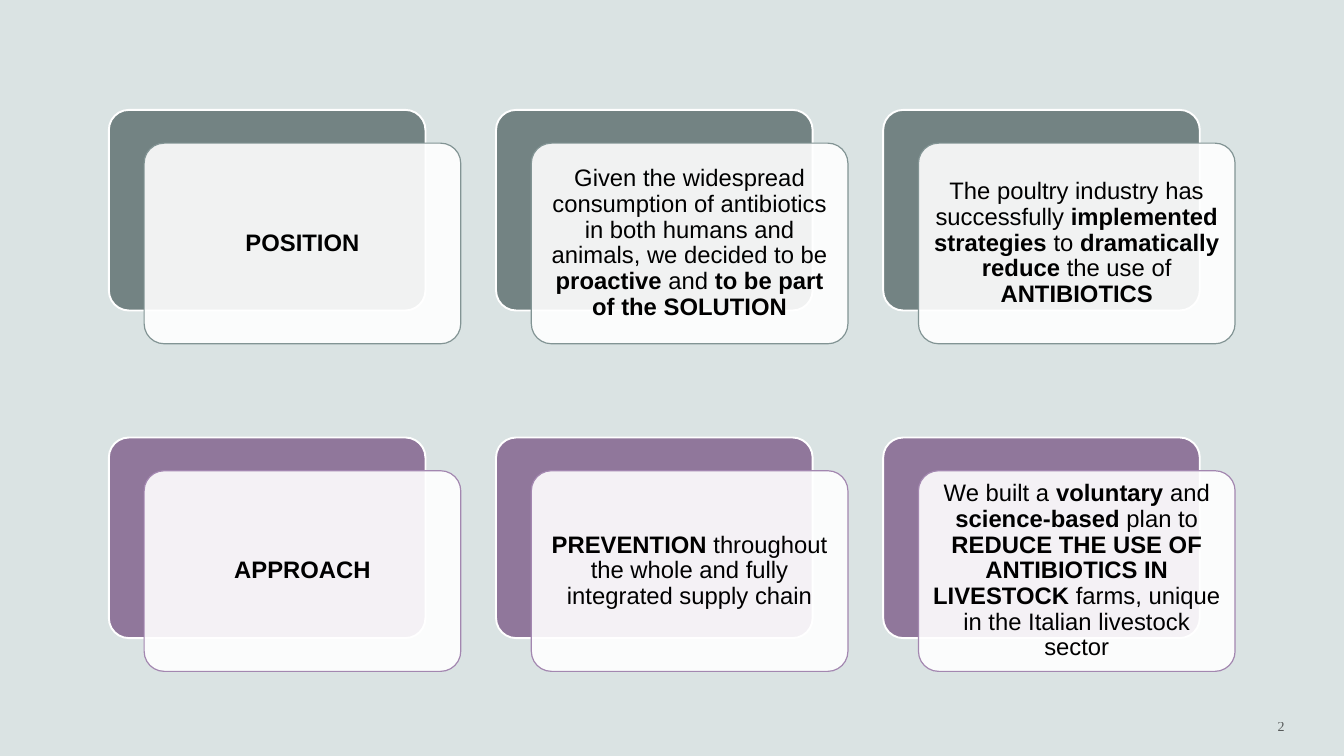
from lxml import etree
from pptx import Presentation
from pptx.dml.color import RGBColor
from pptx.enum.shapes import MSO_SHAPE
from pptx.enum.text import MSO_ANCHOR, PP_ALIGN
from pptx.oxml.ns import qn
from pptx.util import Inches, Pt

BACKGROUND = RGBColor(0xDA, 0xE3, 0xE3)
WHITE = RGBColor(0xFF, 0xFF, 0xFF)
BLACK = RGBColor(0x00, 0x00, 0x00)
TEAL = RGBColor(0x73, 0x83, 0x83)
TEAL_EDGE = RGBColor(0x82, 0x94, 0x94)
PURPLE = RGBColor(0x90, 0x77, 0x9B)
PURPLE_EDGE = RGBColor(0xA3, 0x87, 0xB0)

CARD_WIDTH, CARD_HEIGHT = 3.14, 1.99
FRONT_DX, FRONT_DY = 0.35, 0.33
COLUMN_STEP = 3.84
ROWS_LEFT = 1.08

# Bold passages stand between double asterisks.
POSITION_CARDS = [
    "**POSITION**",
    "Given the widespread consumption of antibiotics in both humans and "
    "animals, we decided to be **proactive **and **to be part of the SOLUTION**",
    "The poultry industry has successfully **implemented strategies **to "
    "**dramatically reduce **the use of **ANTIBIOTICS**",
]
APPROACH_CARDS = [
    "**APPROACH**",
    "**PREVENTION** throughout the whole and fully integrated supply chain",
    "We built a **voluntary** and **science-based** plan to **REDUCE THE USE OF "
    "ANTIBIOTICS IN LIVESTOCK **farms, unique in the Italian livestock sector",
]


def set_opacity(fill, percent):
    color = fill._xPr.find(qn("a:solidFill"))[0]
    etree.SubElement(color, qn("a:alpha")).set("val", str(percent * 1000))


def add_panel(group, left, top, fill_color, edge_color, edge_width):
    panel = group.shapes.add_shape(
        MSO_SHAPE.ROUNDED_RECTANGLE, Inches(left), Inches(top),
        Inches(CARD_WIDTH), Inches(CARD_HEIGHT))
    panel.adjustments[0] = 0.1
    panel.shadow.inherit = False
    panel.fill.solid()
    panel.fill.fore_color.rgb = fill_color
    panel.line.color.rgb = edge_color
    panel.line.width = Pt(edge_width)
    return panel


def write_message(frame, message):
    frame.word_wrap = True
    frame.vertical_anchor = MSO_ANCHOR.MIDDLE
    frame.margin_left = frame.margin_right = Inches(0.07)
    frame.margin_top = frame.margin_bottom = Inches(0.07)
    paragraph = frame.paragraphs[0]
    paragraph.alignment = PP_ALIGN.CENTER
    paragraph.line_spacing = 0.9
    for index, passage in enumerate(message.split("**")):
        if passage:
            run = paragraph.add_run()
            run.text = passage
            run.font.name = "Arial"
            run.font.size = Pt(17)
            run.font.bold = index % 2 == 1
            run.font.color.rgb = BLACK


def add_card_row(slide, left, top, messages, back_color, edge_color):
    """Place each message on a translucent card in front of a coloured one."""
    group = slide.shapes.add_group_shape()
    for column, message in enumerate(messages):
        card_left = left + column * COLUMN_STEP
        add_panel(group, card_left, top, back_color, WHITE, 1.35)
        front = add_panel(group, card_left + FRONT_DX, top + FRONT_DY,
                          WHITE, edge_color, 0.85)
        set_opacity(front.fill, 90)
        write_message(front.text_frame, message)


def add_page_number(slide, left, top, width, height):
    box = slide.shapes.add_textbox(
        Inches(left), Inches(top), Inches(width), Inches(height))
    frame = box.text_frame
    frame.word_wrap = True
    frame.vertical_anchor = MSO_ANCHOR.MIDDLE
    paragraph = frame.paragraphs[0]
    paragraph.alignment = PP_ALIGN.RIGHT
    paragraph.space_after = Pt(6)
    run = paragraph.add_run()
    run.text = "2"
    run.font.name = "Times New Roman"
    run.font.size = Pt(10)
    run.font.color.rgb = BLACK
    set_opacity(run.font.fill, 60)
    run.font._element.set("spc", "200")


def main():
    deck = Presentation()
    deck.slide_width, deck.slide_height = Inches(13.33), Inches(7.5)
    slide = deck.slides.add_slide(deck.slide_layouts[6])
    slide.background.fill.solid()
    slide.background.fill.fore_color.rgb = BACKGROUND
    add_page_number(slide, 10.92, 6.95, 1.92, 0.5)
    add_card_row(slide, ROWS_LEFT, 1.09, POSITION_CARDS, TEAL, TEAL_EDGE)
    add_card_row(slide, ROWS_LEFT, 4.34, APPROACH_CARDS, PURPLE, PURPLE_EDGE)
    deck.save("out.pptx")


if __name__ == "__main__":
    main()
